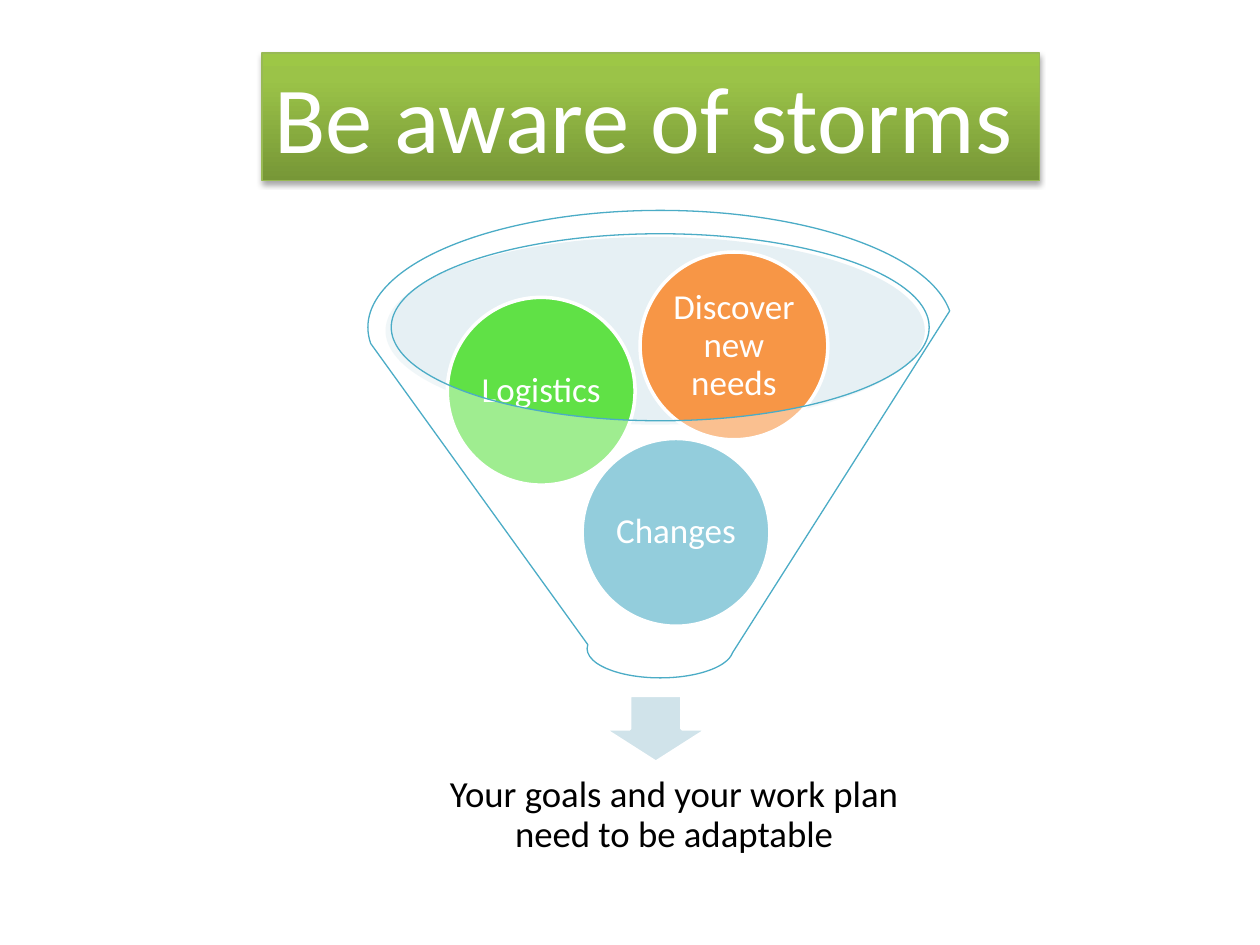
from copy import deepcopy
from dataclasses import dataclass

from lxml import etree
from pptx import Presentation
from pptx.dml.color import RGBColor
from pptx.enum.shapes import MSO_SHAPE
from pptx.enum.text import MSO_ANCHOR, MSO_AUTO_SIZE, PP_ALIGN
from pptx.oxml.ns import qn
from pptx.util import Inches, Pt

OVAL, ARROW, FUNNEL = MSO_SHAPE.OVAL, MSO_SHAPE.DOWN_ARROW, MSO_SHAPE.FUNNEL
TOP, MIDDLE = MSO_ANCHOR.TOP, MSO_ANCHOR.MIDDLE
LEFT, CENTER = PP_ALIGN.LEFT, PP_ALIGN.CENTER
FIT = MSO_AUTO_SIZE.SHAPE_TO_FIT_TEXT
FONT = "Calibri"
WHITE, TEAL = "FFFFFF", "4BACC6"
BALL_SIZE = 1.49


@dataclass
class Box:
    left: float
    top: float
    width: float
    height: float

    def lengths(self) -> list:
        return [Inches(v) for v in (self.left, self.top, self.width, self.height)]


@dataclass
class Ball:
    text: str
    left: float
    top: float
    fill: str


BALLS = [
    Ball("Changes", 4.62, 3.48, TEAL),
    Ball("Logistics", 3.55, 2.36, "60E146"),
    Ball("Discover new needs", 5.08, 2, "F79646"),
]
STOPS = [(0, "779737"), (0.8, "9BC348"), (1, "9DC746")]


def color(code: str) -> RGBColor:
    return RGBColor.from_string(code)


def set_alpha(node, percent: int) -> None:
    """Make the first RGB colour below node partly transparent."""
    rgb = next(node.iter(qn("a:srgbClr")))
    etree.SubElement(rgb, qn("a:alpha"), val=str(percent * 1000))


def set_line(shape, code: str, width: float) -> None:
    shape.line.color.rgb = color(code)
    shape.line.width = Pt(width)


def add_shape(slide, kind, box: Box, fill: str, alpha: int = 100):
    shape = slide.shapes.add_shape(kind, *box.lengths())
    shape.shadow.inherit = False
    shape.fill.solid()
    shape.fill.fore_color.rgb = color(fill)
    if alpha < 100:
        set_alpha(shape.element.spPr, alpha)
    shape.line.fill.background()
    return shape


def set_text(shape, text: str, size: float, code: str, inset: float,
             align=CENTER, anchor=MIDDLE, spacing: float = 0.9) -> None:
    frame = shape.text_frame
    frame.word_wrap = True
    frame.vertical_anchor = anchor
    frame.margin_left = frame.margin_right = Inches(inset)
    frame.margin_top = frame.margin_bottom = Inches(inset)
    para = frame.paragraphs[0]
    para.alignment = align
    para.line_spacing = spacing
    run = para.add_run()
    run.text = text
    run.font.name = FONT
    run.font.size = Pt(size)
    run.font.color.rgb = color(code)


def add_ball(slide, ball: Ball) -> None:
    box = Box(ball.left, ball.top, BALL_SIZE, BALL_SIZE)
    shape = add_shape(slide, OVAL, box, ball.fill)
    set_line(shape, WHITE, 2)
    set_text(shape, ball.text, 20, WHITE, 0.03)


def set_gradient(shape) -> None:
    fill = shape.fill
    fill.gradient()
    fill.gradient_angle = 90
    stops = next(shape.element.spPr.iter(qn("a:gsLst")))
    stops.append(deepcopy(stops[0]))
    for stop, (place, code) in zip(fill.gradient_stops, STOPS):
        stop.position = place
        stop.color.rgb = color(code)


def add_shadow(shape) -> None:
    effects = etree.SubElement(shape.element.spPr, qn("a:effectLst"))
    outer = etree.SubElement(
        effects, qn("a:outerShdw"), blurRad=str(Pt(3.1)), dist=str(Pt(1.8)),
        dir="5400000", rotWithShape="0")
    etree.SubElement(outer, qn("a:srgbClr"), val="000000")
    set_alpha(outer, 35)


def format_title(title) -> None:
    box = Box(2.08, 0.42, 6.17, 1.01)
    title.left, title.top, title.width, title.height = box.lengths()
    set_gradient(title)
    set_line(title, "98B955", 0.75)
    add_shadow(title)
    set_text(title, "Be aware of storms", 54, WHITE, 0.05, LEFT, TOP, 1.0)
    frame = title.text_frame
    frame.margin_left = frame.margin_right = Inches(0.1)
    frame.auto_size = FIT


def main() -> None:
    deck = Presentation()
    deck.slide_width, deck.slide_height = Inches(10), Inches(7.5)
    slide = deck.slides.add_slide(deck.slide_layouts[5])
    format_title(slide.shapes.title)

    add_shape(slide, OVAL, Box(3.06, 1.88, 4.28, 1.49), "C1DBE5", 40)
    arrow = add_shape(slide, ARROW, Box(4.79, 5.52, 0.83, 0.53), "D0E3EA")
    set_line(arrow, WHITE, 2)
    goal = slide.shapes.add_textbox(*Box(3.36, 5.98, 3.98, 0.99).lengths())
    set_text(goal, "Your goals and your work plan need to be adaptable",
             21, "000000", 0.16)
    for ball in BALLS:
        add_ball(slide, ball)
    funnel = add_shape(slide, FUNNEL, Box(2.92, 1.67, 4.64, 3.71), WHITE, 40)
    set_line(funnel, TEAL, 0.75)

    deck.save("out.pptx")


if __name__ == "__main__":
    main()
